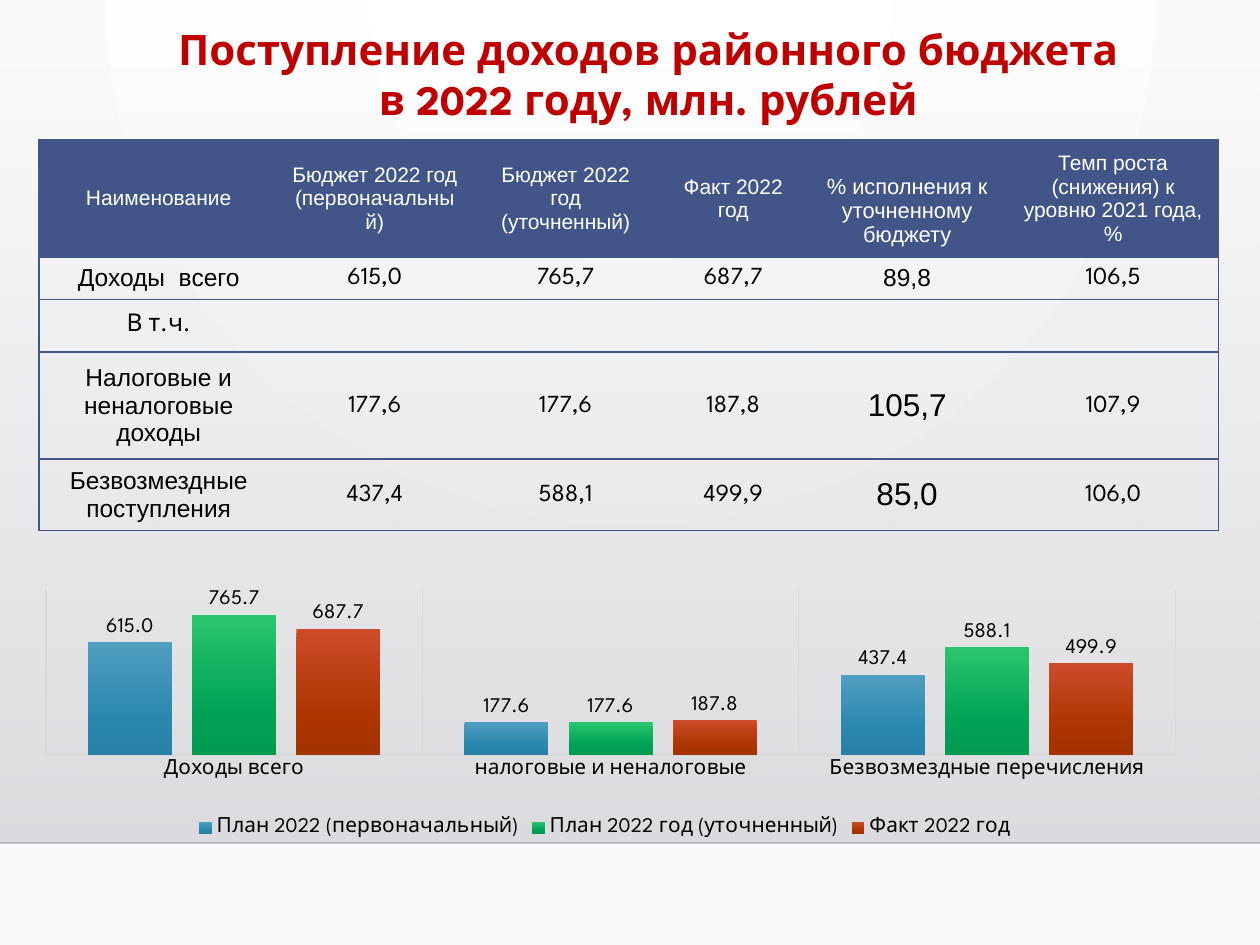
from lxml.etree import SubElement
from pptx import Presentation
from pptx.chart.data import CategoryChartData
from pptx.dml.color import RGBColor
from pptx.enum.chart import XL_CHART_TYPE, XL_LABEL_POSITION, XL_LEGEND_POSITION, XL_TICK_MARK
from pptx.enum.shapes import MSO_CONNECTOR, MSO_SHAPE
from pptx.enum.text import MSO_ANCHOR, PP_ALIGN
from pptx.oxml.ns import qn
from pptx.util import Inches, Pt

RED = RGBColor(0xC0, 0x00, 0x00)
NAVY = RGBColor(0x41, 0x55, 0x88)
WHITE = RGBColor(0xFF, 0xFF, 0xFF)
PAPER = RGBColor(0xFA, 0xFA, 0xFA)
BLACK = RGBColor(0x00, 0x00, 0x00)
GRID = RGBColor(0xD9, 0xD9, 0xD9)
MIST = RGBColor(0xDC, 0xDC, 0xE0)
MIST_END = RGBColor(0xDE, 0xDE, 0xE2)
BLUES = [RGBColor(0x4F, 0x9E, 0xC0), RGBColor(0x2A, 0x87, 0xAE), RGBColor(0x28, 0x80, 0xA5)]
GREENS = [RGBColor(0x29, 0xC6, 0x6D), RGBColor(0x00, 0xA2, 0x56), RGBColor(0x00, 0x9A, 0x52)]
RUSTS = [RGBColor(0xCD, 0x4B, 0x2A), RGBColor(0xAC, 0x35, 0x00), RGBColor(0xA4, 0x33, 0x00)]

SANS = "Arial"
DISPLAY = "League Spartan"
PLAIN_TABLE = "{2D5ABB26-0587-4C30-8999-92F81FD0307C}"
NUMBER = "#,##0.0"

HEADERS = ["Наименование", "Бюджет 2022 год (первоначальный)", "Бюджет 2022 год (уточненный)",
           "Факт 2022 год", "% исполнения к уточненному бюджету",
           "Темп роста (снижения) к уровню 2021 года, %"]
ROWS = [
    ["Доходы  всего", "615,0", "765,7", "687,7", "89,8", "106,5"],
    ["В т.ч.", "", "", "", "", ""],
    ["Налоговые и неналоговые доходы", "177,6", "177,6", "187,8", "105,7", "107,9"],
    ["Безвозмездные поступления", "437,4", "588,1", "499,9", "85,0", "106,0"],
]
COL_WIDTHS = [1.9, 1.53, 1.5, 1.16, 1.6, 1.67]
ROW_HEIGHTS = [0.93, 0.33, 0.42, 0.85, 0.57]
CATEGORIES = ["Доходы всего", "налоговые и неналоговые", "Безвозмездные перечисления"]
SERIES = [
    ("План 2022 (первоначальный)", [615.0, 177.6, 437.4], BLUES),
    ("План 2022 год (уточненный)", [765.7, 177.6, 588.1], GREENS),
    ("Факт 2022 год", [687.7, 187.8, 499.9], RUSTS),
]


class Deck:
    def __init__(self, width, height):
        self.prs = Presentation()
        self.prs.slide_width, self.prs.slide_height = Inches(width), Inches(height)
        self.s = self.prs.slides.add_slide(self.prs.slide_layouts[6])

    def box(self, left, top, width, height):
        w, h = self.prs.slide_width, self.prs.slide_height
        return int(left * w), int(top * h), int(width * w), int(height * h)

    def font(self, font, size, name, color, bold=False):
        font.size, font.name, font.bold = Pt(size), name, bold
        font.color.rgb = color

    def alpha(self, color, percent):
        SubElement(color, qn("a:alpha"), val=str(percent * 1000))

    def gradient(self, fill, element, stops, radial=False):
        fill.gradient()
        grad = element.find(".//" + qn("a:gradFill"))
        gs_list = grad.find(qn("a:gsLst"))
        for gs in list(gs_list):
            gs_list.remove(gs)
        for pos, color, opacity in stops:
            gs = SubElement(gs_list, qn("a:gs"), pos=str(pos * 1000))
            clr = SubElement(gs, qn("a:srgbClr"), val=str(color))
            if opacity < 100:
                self.alpha(clr, opacity)
        lin = grad.find(qn("a:lin"))
        if radial:
            grad.remove(lin)
            circle = SubElement(grad, qn("a:path"), path="circle")
            SubElement(circle, qn("a:fillToRect"), l="43000", t="0", r="43000", b="100000")
        else:
            lin.set("ang", "5400000")

    def background(self):
        self.gradient(self.s.background.fill, self.s._element,
                      [(0, WHITE, 100), (100, PAPER, 100)], radial=True)

    def panel(self, left, top, width, height):
        sp = self.s.shapes.add_shape(MSO_SHAPE.RECTANGLE, *self.box(left, top, width, height))
        sp.shadow.inherit = False
        sp.line.fill.background()
        self.gradient(sp.fill, sp._element, [(0, MIST, 0), (100, MIST_END, 100)])

    def rule(self, top):
        left, y, width, _ = self.box(0, top, 1, 0)
        ln = self.s.shapes.add_connector(MSO_CONNECTOR.STRAIGHT, left, y, width, y)
        ln.line.width = Pt(1)
        ln.line.color.rgb = BLACK
        self.alpha(ln._element.find(".//" + qn("a:srgbClr")), 20)
        SubElement(ln._element.spPr, qn("a:effectLst"))

    def title(self, lines, *area):
        tf = self.s.shapes.add_textbox(*self.box(*area)).text_frame
        tf.word_wrap = True
        tf.vertical_anchor = MSO_ANCHOR.MIDDLE
        for i, line in enumerate(lines):
            p = tf.paragraphs[0] if i == 0 else tf.add_paragraph()
            p.alignment = PP_ALIGN.CENTER
            r = p.add_run()
            r.text = line
            self.font(r.font, 24, DISPLAY, RED, True)

    def borders(self, cell, sides):
        tc_pr = cell._tc.get_or_add_tcPr()
        for i, side in enumerate(sides):
            ln = SubElement(tc_pr, qn("a:ln" + side), w=str(Pt(0.75)))
            SubElement(SubElement(ln, qn("a:solidFill")), qn("a:srgbClr"), val=str(NAVY))
            tc_pr.insert(i, ln)

    def cell(self, cell, text, row, col):
        header, numeric = row == 0, row > 0 and col in (1, 2, 3, 5)
        cell.vertical_anchor = MSO_ANCHOR.MIDDLE
        if header:
            cell.fill.solid()
            cell.fill.fore_color.rgb = NAVY
        else:
            cell.fill.background()
        if header and col == 4:
            cell.margin_top = Inches(0.25)
        if numeric:
            cell.margin_left = cell.margin_right = cell.margin_top = Inches(0.01)
            cell.margin_bottom = 0
        sides = (["L"] if col == 0 else []) + (["R"] if col == len(HEADERS) - 1 else [])
        self.borders(cell, sides + ["T", "B"])
        p = cell.text_frame.paragraphs[0]
        p.alignment = PP_ALIGN.CENTER
        if not text:
            return
        r = p.add_run()
        r.text = text
        if header:
            size = 12.5 if col == 4 else 12
        else:
            size = 18 if col == 4 and row > 2 else 14
        name = DISPLAY if numeric or row == 2 else SANS
        self.font(r.font, size, name, WHITE if header else BLACK)

    def table(self, rows, *area):
        frame = self.s.shapes.add_table(len(rows), len(rows[0]), *self.box(*area))
        tbl = frame.table
        tbl.first_row = tbl.horz_banding = False
        frame._element.find(".//" + qn("a:tableStyleId")).text = PLAIN_TABLE
        for column, width in zip(tbl.columns, COL_WIDTHS):
            column.width = Inches(width)
        for i, (height, texts) in enumerate(zip(ROW_HEIGHTS, rows)):
            tbl.rows[i].height = Inches(height)
            for j, text in enumerate(texts):
                self.cell(tbl.cell(i, j), text, i, j)

    def chart(self, *area):
        data = CategoryChartData(number_format=NUMBER)
        data.categories = CATEGORIES
        for name, values, _ in SERIES:
            data.add_series(name, values)
        chart = self.s.shapes.add_chart(XL_CHART_TYPE.COLUMN_CLUSTERED, *self.box(*area), data).chart
        chart.has_title = False
        self.font(chart.font, 10, DISPLAY, BLACK)
        chart.has_legend = True
        chart.legend.position = XL_LEGEND_POSITION.BOTTOM
        chart.legend.include_in_layout = False
        self.font(chart.legend.font, 11.9, DISPLAY, BLACK)
        cat, val = chart.category_axis, chart.value_axis
        cat.major_tick_mark = XL_TICK_MARK.NONE
        cat.has_major_gridlines = True
        for line, width in ((cat.format.line, 1), (cat.major_gridlines.format.line, 0.75)):
            line.width = Pt(width)
            line.color.rgb = GRID
        self.font(cat.tick_labels.font, 11.9, DISPLAY, BLACK)
        val.visible = val.has_major_gridlines = False
        val.minimum_scale, val.maximum_scale = 0, 900
        plot = chart.plots[0]
        plot.gap_width, plot.overlap, plot.vary_by_categories = 100, -24, False
        for series, (_, _, colors) in zip(plot.series, SERIES):
            stops = [(pos, color, 100) for pos, color in zip((0, 69, 100), colors)]
            self.gradient(series.format.fill, series._element, stops)
            labels = series.data_labels
            labels.show_value = True
            labels.position = XL_LABEL_POSITION.OUTSIDE_END
            labels.number_format, labels.number_format_is_linked = NUMBER, False
            self.font(labels.font, 11.9, DISPLAY, BLACK)
        self.plot_layout(chart, x=0.02, y=0.08, w=0.97, h=0.6)

    def plot_layout(self, chart, **shares):
        area = chart._chartSpace.find(".//" + qn("c:plotArea"))
        for old in area.findall(qn("c:layout")):
            area.remove(old)
        layout = SubElement(area, qn("c:layout"))
        area.insert(0, layout)
        manual = SubElement(layout, qn("c:manualLayout"))
        settings = {"layoutTarget": "inner", "xMode": "edge", "yMode": "edge", **shares}
        for tag, value in settings.items():
            SubElement(manual, qn("c:" + tag), val=str(value))


def main():
    deck = Deck(10, 7.5)
    deck.background()
    deck.panel(0, 0.51 / 7.5, 1, 6.18 / 7.5)
    deck.rule(6.69 / 7.5)
    deck.title(["Поступление доходов районного бюджета", "в 2022 году, млн. рублей"],
               0.047, 0.13 / 7.5, 0.935, 0.91 / 7.5)
    deck.table([HEADERS] + ROWS, 0.031, 1.11 / 7.5, 0.935, 3.1 / 7.5)
    deck.chart(0.018, 4.51 / 7.5, 0.924, 2.18 / 7.5)
    deck.prs.save("out.pptx")


if __name__ == "__main__":
    main()
